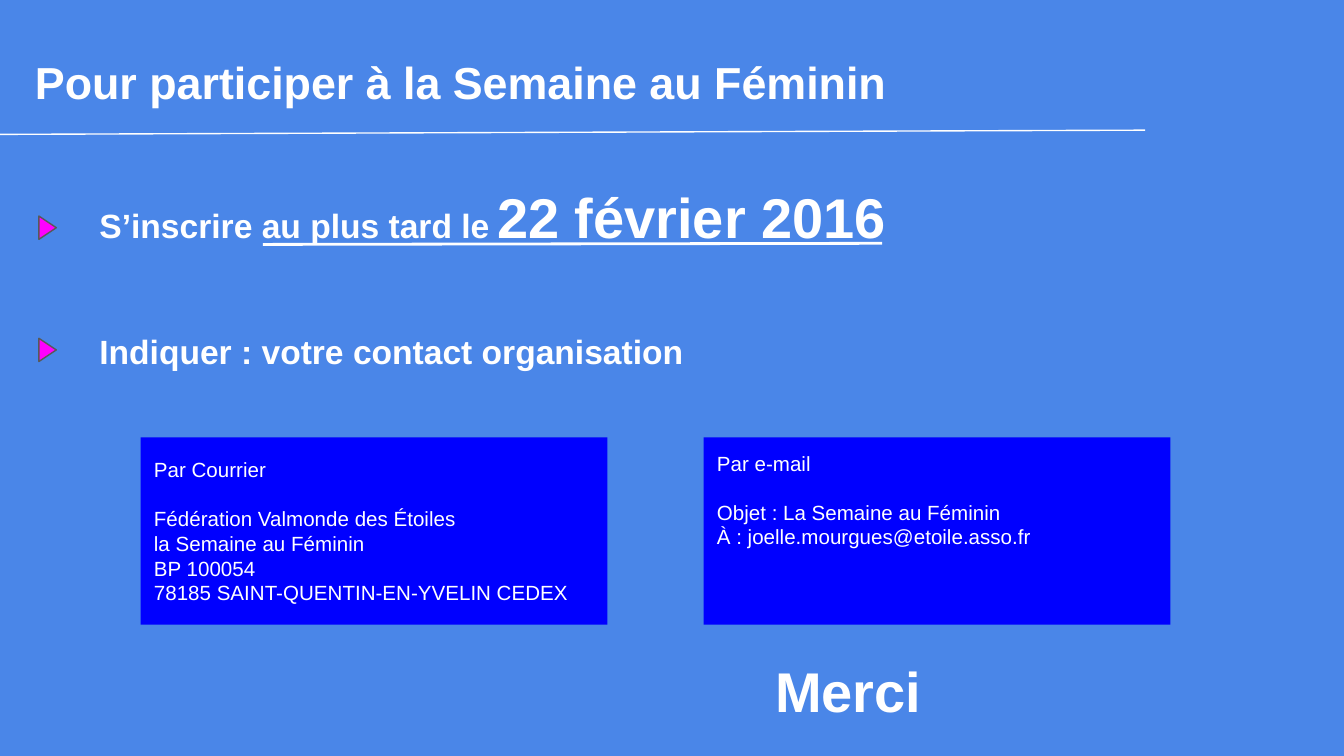
from pptx import Presentation
from pptx.dml.color import RGBColor
from pptx.enum.shapes import MSO_CONNECTOR, MSO_SHAPE
from pptx.enum.text import MSO_ANCHOR, PP_ALIGN
from pptx.oxml.ns import qn
from pptx.util import Cm, Pt
from lxml.etree import SubElement

COLORS = {
    "background": "4A86E8",
    "text": "FFFFFF",
    "marker": "FF00FF",
    "marker_edge": "595959",
    "card": "0000FF",
}
FONT = "Arial"
INSET = Cm(0.25)


def rgb(name):
    return RGBColor.from_string(COLORS[name])


def format_run(run, size, bold):
    run.font.name = FONT
    run.font.size = Pt(size)
    run.font.bold = bold
    run.font.color.rgb = rgb("text")


def prepare_frame(frame, anchor=MSO_ANCHOR.TOP):
    frame.word_wrap = True
    frame.vertical_anchor = anchor
    frame.margin_left = frame.margin_right = INSET
    frame.margin_top = frame.margin_bottom = INSET


def add_rule(slide, start, end, width):
    rule = slide.shapes.add_connector(
        MSO_CONNECTOR.STRAIGHT, *map(Cm, start), *map(Cm, end))
    rule.line.color.rgb = rgb("text")
    rule.line.width = Pt(width)
    SubElement(rule._element.spPr, qn("a:effectLst"))


def add_heading(slide, left, top, width, height):
    heading = slide.shapes.title
    heading.left, heading.top = Cm(left), Cm(top)
    heading.width, heading.height = Cm(width), Cm(height)
    heading.text_frame.text = "Pour participer à la Semaine au Féminin"
    prepare_frame(heading.text_frame)
    line = heading.text_frame.paragraphs[0]
    line.alignment = PP_ALIGN.LEFT
    format_run(line.runs[0], 24, True)
    add_rule(slide, (0, top + 1.75), (21.64, top + 1.67), 0.75)


def add_statement(slide, left, top, width, height, parts):
    statement = slide.shapes.add_textbox(Cm(left), Cm(top), Cm(width), Cm(height))
    prepare_frame(statement.text_frame)
    line = statement.text_frame.paragraphs[0]
    for words, size in parts:
        run = line.add_run()
        run.text = words
        format_run(run, size, True)


def add_marker(slide, left, top):
    marker = slide.shapes.add_shape(
        MSO_SHAPE.ISOSCELES_TRIANGLE, Cm(left), Cm(top), Cm(0.44), Cm(0.33))
    marker.rotation = 90
    marker.shadow.inherit = False
    marker.fill.solid()
    marker.fill.fore_color.rgb = rgb("marker")
    marker.line.color.rgb = rgb("marker_edge")
    marker.line.width = Pt(0.75)


def add_instructions(slide, left, top, width):
    deadline = [("S’inscrire au plus tard le", 18), (" ", 14), ("22 février 2016", 30)]
    contact = [("Indiquer : votre contact organisation", 18)]
    text_left, text_width = left + 0.95, width - 0.95
    add_marker(slide, left, top + 0.94)
    add_marker(slide, left, top + 3.25)
    add_statement(slide, text_left, top, text_width, 1.55, deadline)
    add_rule(slide, (left + 4.29, top + 1.42), (left + 15.99, top + 1.4), 1.5)
    add_statement(slide, text_left, top + 2.8, text_width, 1.22, contact)


def add_card(slide, left, top, width, height, lines, anchor):
    card = slide.shapes.add_shape(
        MSO_SHAPE.RECTANGLE, Cm(left), Cm(top), Cm(width), Cm(height))
    card.shadow.inherit = False
    card.fill.solid()
    card.fill.fore_color.rgb = rgb("card")
    card.line.fill.background()
    card.text_frame.text = "\n".join(lines)
    prepare_frame(card.text_frame, anchor)
    for line in card.text_frame.paragraphs:
        line.alignment = PP_ALIGN.LEFT
        format_run(line.runs[0], 11, False)
    card.text_frame.paragraphs[0].space_after = Pt(13)


def add_cards(slide, left, top, width, height):
    postal = [
        "Par Courrier",
        "Fédération Valmonde des Étoiles",
        "la Semaine au Féminin",
        "BP 100054",
        "78185 SAINT-QUENTIN-EN-YVELIN CEDEX",
    ]
    email = [
        "Par e-mail",
        "Objet : La Semaine au Féminin",
        "À : joelle.mourgues@etoile.asso.fr",
    ]
    card_width = 8.82
    add_card(slide, left, top, card_width, height, postal, MSO_ANCHOR.MIDDLE)
    add_card(slide, left + width - card_width, top, card_width, height,
             email, MSO_ANCHOR.TOP)


def main():
    deck = Presentation()
    deck.slide_width, deck.slide_height = Cm(25.4), Cm(14.29)
    slide = deck.slides.add_slide(deck.slide_layouts[5])
    slide.background.fill.solid()
    slide.background.fill.fore_color.rgb = rgb("background")
    add_heading(slide, 0.41, 0.79, 23.93, 1.55)
    add_instructions(slide, 0.68, 3.2, 20.1)
    add_cards(slide, 2.66, 8.27, 19.46, 3.54)
    add_statement(slide, 14.4, 12.17, 7.09, 1.35, [("Merci", 30)])
    deck.save("out.pptx")


if __name__ == "__main__":
    main()
